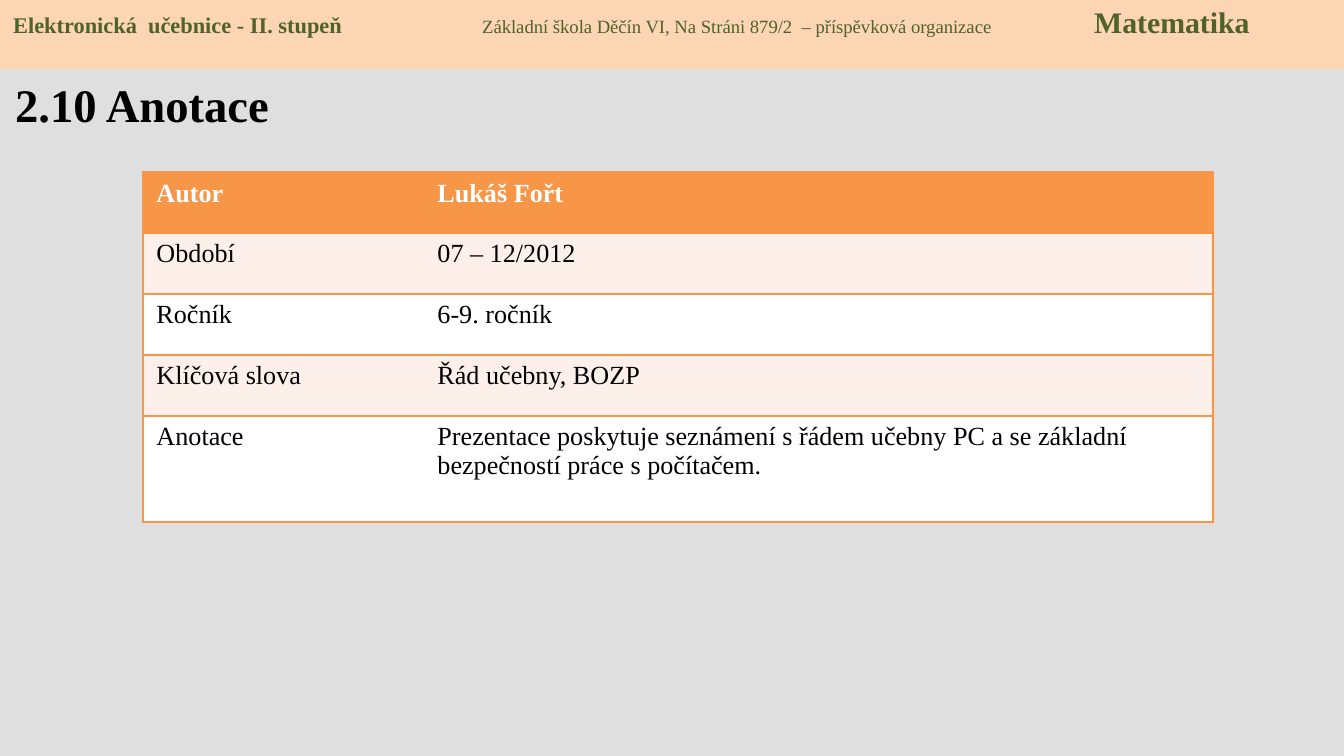
from lxml import etree
from pptx import Presentation
from pptx import util as u
from pptx.dml.color import RGBColor
from pptx.enum import shapes, text
from pptx.oxml.ns import qn

PX = 914400 / 134.4
FONT = "Times New Roman"
BLACK = RGBColor(0x00, 0x00, 0x00)
WHITE = RGBColor(0xFF, 0xFF, 0xFF)
GREY = RGBColor(0xDF, 0xDF, 0xDF)
ORANGE = RGBColor(0xF7, 0x96, 0x46)
BLUSH = RGBColor(0xFD, 0xEF, 0xE9)
PEACH = RGBColor(0xFC, 0xD5, 0xB5)
GREEN = RGBColor(0x4F, 0x62, 0x28)


def px(*lengths):
    return [u.Emu(round(length * PX)) for length in lengths]


def add_span(para, words, size, color, bold=False):
    span = para.add_run()
    span.text = words
    span.font.name = FONT
    span.font.size = u.Pt(size)
    span.font.bold = bold
    span.font.color.rgb = color


deck = Presentation()
deck.slide_width, deck.slide_height = px(1344, 756)
page = deck.slides.add_slide(deck.slide_layouts[6])
page.background.fill.solid()
page.background.fill.fore_color.rgb = GREY

# Title
title = page.shapes.add_textbox(*px(2, 69, 429, 66)).text_frame
title.word_wrap = True
add_span(title.paragraphs[0], "2.10 Anotace", 25, BLACK, True)

# Annotation table
rows = [
    ("Autor", "Lukáš Fořt"),
    ("Období", "07 – 12/2012"),
    ("Ročník", "6-9. ročník"),
    ("Klíčová slova", "Řád učebny, BOZP"),
    ("Anotace", "Prezentace poskytuje seznámení s řádem učebny PC "
                "a se základní bezpečností práce s počítačem."),
]
table = page.shapes.add_table(len(rows), 2, *px(143, 172, 1070, 350)).table
table.first_row = table.horz_banding = False
for column, width in zip(table.columns, px(281, 789)):
    column.width = width
for row, height in zip(table.rows, px(61, 61, 61, 61, 106)):
    row.height = height

for i, row in enumerate(rows):
    header = i == 0
    for j, words in enumerate(row):
        cell = table.cell(i, j)
        properties = cell._tc.get_or_add_tcPr()
        inner_side = "lnL" if j else "lnR"
        for side in ("lnL", "lnR", "lnT", "lnB"):
            line = etree.SubElement(properties, qn("a:" + side), w=str(u.Pt(1)))
            if side == inner_side:
                etree.SubElement(line, qn("a:noFill"))
            else:
                paint = etree.SubElement(line, qn("a:solidFill"))
                etree.SubElement(paint, qn("a:srgbClr"), val=str(ORANGE))
        cell.fill.solid()
        cell.fill.fore_color.rgb = ORANGE if header else BLUSH if i % 2 else WHITE
        add_span(cell.text_frame.paragraphs[0], words, 14,
                 WHITE if header else BLACK, header)

# Header band, its three parts aligned by tab stops
band = page.shapes.add_shape(shapes.MSO_SHAPE.RECTANGLE, *px(0, -3, 1344, 72))
band.shadow.inherit = False
band.fill.solid()
band.fill.fore_color.rgb = PEACH
band.line.fill.background()
frame = band.text_frame
frame.word_wrap = True
frame.vertical_anchor = text.MSO_ANCHOR.TOP
para = frame.paragraphs[0]
para.alignment = text.PP_ALIGN.LEFT
tabs = etree.SubElement(para._p.get_or_add_pPr(), qn("a:tabLst"))
for stop in px(469, 1081):
    etree.SubElement(tabs, qn("a:tab"), pos=str(stop), algn="l")
add_span(para, "Elektronická  učebnice - II. stupeň\t", 12, GREEN, True)
add_span(para, "Základní škola Děčín VI, Na Stráni 879/2  – příspěvková organizace\t",
         10, GREEN)
add_span(para, "Matematika", 16, GREEN, True)

deck.save("out.pptx")
